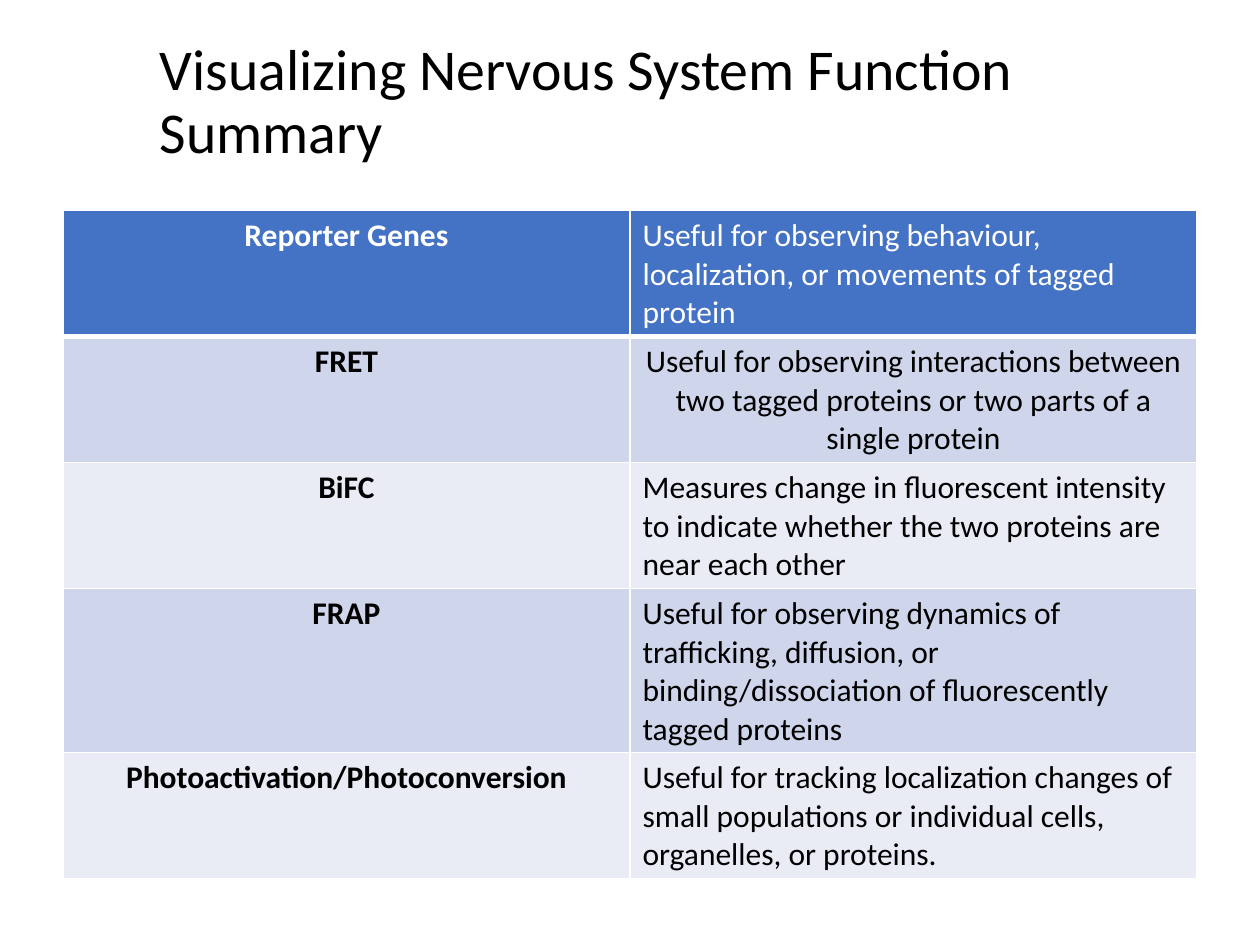
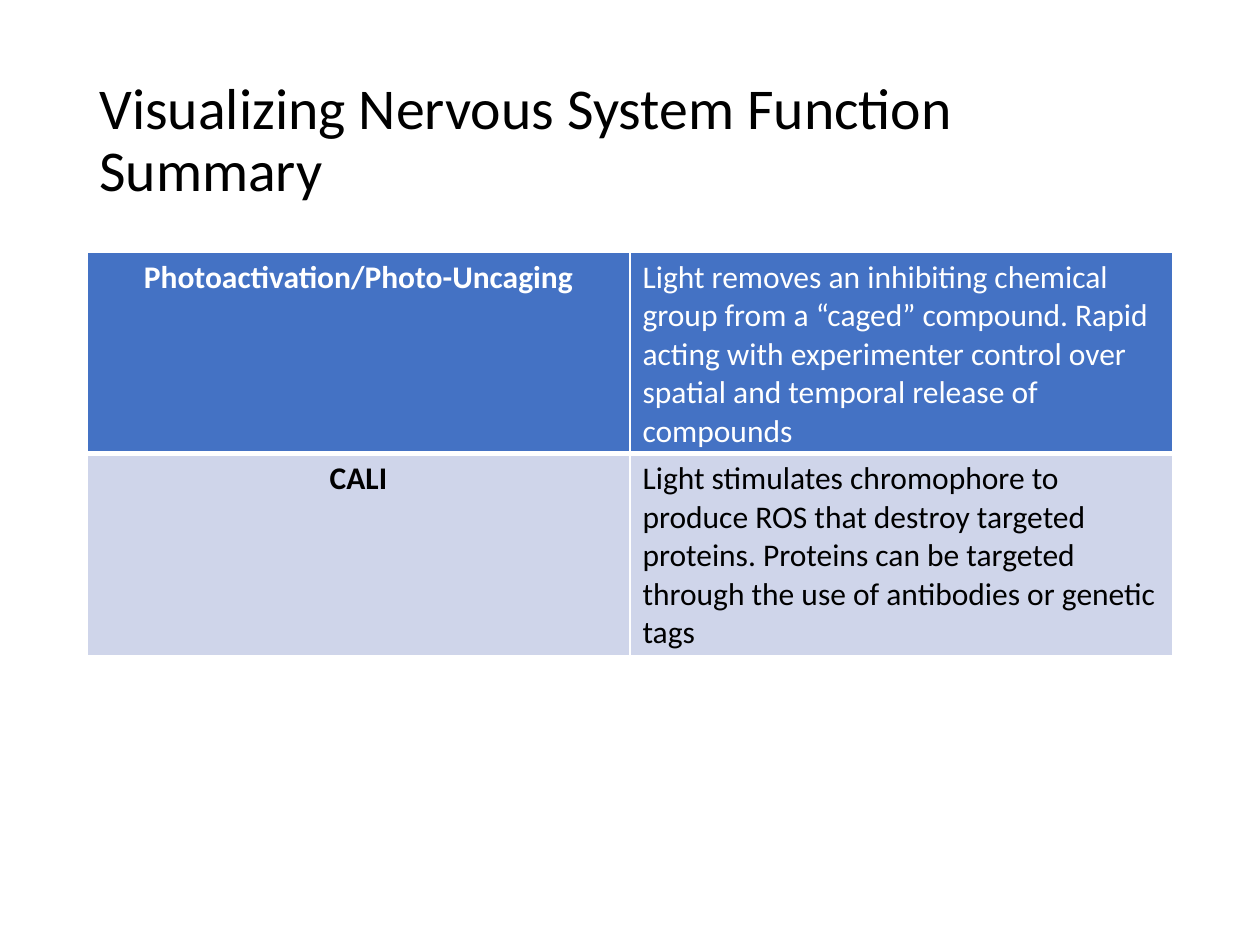
from lxml import etree
from pptx import Presentation
from pptx.dml.color import RGBColor
from pptx.enum.text import MSO_ANCHOR, PP_ALIGN
from pptx.oxml.ns import qn
from pptx.util import Inches, Pt

LEFT, CENTER = PP_ALIGN.LEFT, PP_ALIGN.CENTER
MIDDLE = MSO_ANCHOR.MIDDLE

# Shared style
FONT = "Calibri"
WHITE, BLACK = "FFFFFF", "000000"
HEADER_FILL = "4472C4"
BAND_FILLS = ("CFD5EA", "E9EBF5")
THIN, THICK = 1, 3
ROW_HEIGHT = 0.41
TITLE = "Visualizing Nervous System Function Summary"

# Each row: technique, its use, alignment of the use
IMAGING_ROWS = [
    ("Reporter Genes", "Useful for observing behaviour, localization, or "
     "movements of tagged protein", LEFT),
    ("FRET", "Useful for observing interactions between two tagged proteins "
     "or two parts of a single protein", CENTER),
    ("BiFC", "Measures change in fluorescent intensity to indicate whether "
     "the two proteins are near each other", LEFT),
    ("FRAP", "Useful for observing dynamics of trafficking, diffusion, or "
     "binding/dissociation of fluorescently tagged proteins", LEFT),
    ("Photoactivation/Photoconversion", "Useful for tracking localization "
     "changes of small populations or individual cells, organelles, or "
     "proteins.", LEFT),
]
MANIPULATION_ROWS = [
    ("Photoactivation/Photo-Uncaging", "Light removes an inhibiting chemical "
     "group from a “caged” compound. Rapid acting with experimenter control "
     "over spatial and temporal release of compounds", LEFT),
    ("CALI", "Light stimulates chromophore to produce ROS that destroy "
     "targeted proteins. Proteins can be targeted through the use of "
     "antibodies or genetic tags", LEFT),
]


def rgb(hex_color):
    return RGBColor.from_string(hex_color)


def write(frame, text, size, color, align=LEFT, bold=False):
    paragraph = frame.paragraphs[0]
    paragraph.alignment = align
    run = paragraph.add_run()
    run.text = text
    style = {"name": FONT, "size": Pt(size), "bold": bold}
    for attribute, value in style.items():
        setattr(run.font, attribute, value)
    run.font.color.rgb = rgb(color)
    return paragraph


def add_title(slide, left, top, width, height):
    box = slide.shapes.add_textbox(*map(Inches, (left, top, width, height)))
    frame = box.text_frame
    frame.word_wrap = True
    frame.vertical_anchor = MIDDLE
    write(frame, TITLE, 33, BLACK).line_spacing = 0.9


def set_borders(cell, top, bottom):
    properties = cell._tc.get_or_add_tcPr()
    widths = {"a:lnL": THIN, "a:lnR": THIN, "a:lnT": top, "a:lnB": bottom}
    for position, (side, width) in enumerate(widths.items()):
        line = etree.Element(qn(side), w=str(Pt(width)))
        fill = etree.SubElement(line, qn("a:solidFill"))
        etree.SubElement(fill, qn("a:srgbClr"), val=WHITE)
        properties.insert(position, line)


def add_technique_table(slide, left, top, width, rows, header_height=ROW_HEIGHT):
    height = header_height + ROW_HEIGHT * (len(rows) - 1)
    table = slide.shapes.add_table(
        len(rows), 2, *map(Inches, (left, top, width, height))).table
    for column in table.columns:
        column.width = Inches(width / 2)

    for index, (technique, use, use_align) in enumerate(rows):
        is_header = index == 0
        table.rows[index].height = Inches(header_height if is_header else ROW_HEIGHT)
        fill = HEADER_FILL if is_header else BAND_FILLS[(index - 1) % 2]
        color = WHITE if is_header else BLACK
        name_cell, use_cell = table.rows[index].cells
        write(name_cell.text_frame, technique, 18, color, CENTER, bold=True)
        write(use_cell.text_frame, use, 18, color, use_align)
        for cell in (name_cell, use_cell):
            cell.fill.solid()
            cell.fill.fore_color.rgb = rgb(fill)
            set_borders(cell, top=THICK if index == 1 else THIN,
                        bottom=THICK if is_header else THIN)


def main():
    deck = Presentation()
    deck.slide_width, deck.slide_height = Inches(10), Inches(7.5)
    blank = deck.slide_layouts[6]

    # Imaging techniques
    imaging = deck.slides.add_slide(blank)
    add_title(imaging, 1.17, 0.17, 7.58, 1.3)
    add_technique_table(imaging, 0.5, 1.67, 9, IMAGING_ROWS, header_height=0.83)

    # Light-driven manipulation techniques
    manipulation = deck.slides.add_slide(blank)
    add_title(manipulation, 0.69, 0.4, 8.62, 1.45)
    add_technique_table(manipulation, 0.69, 2, 8.62, MANIPULATION_ROWS)

    deck.save("out.pptx")


if __name__ == "__main__":
    main()
